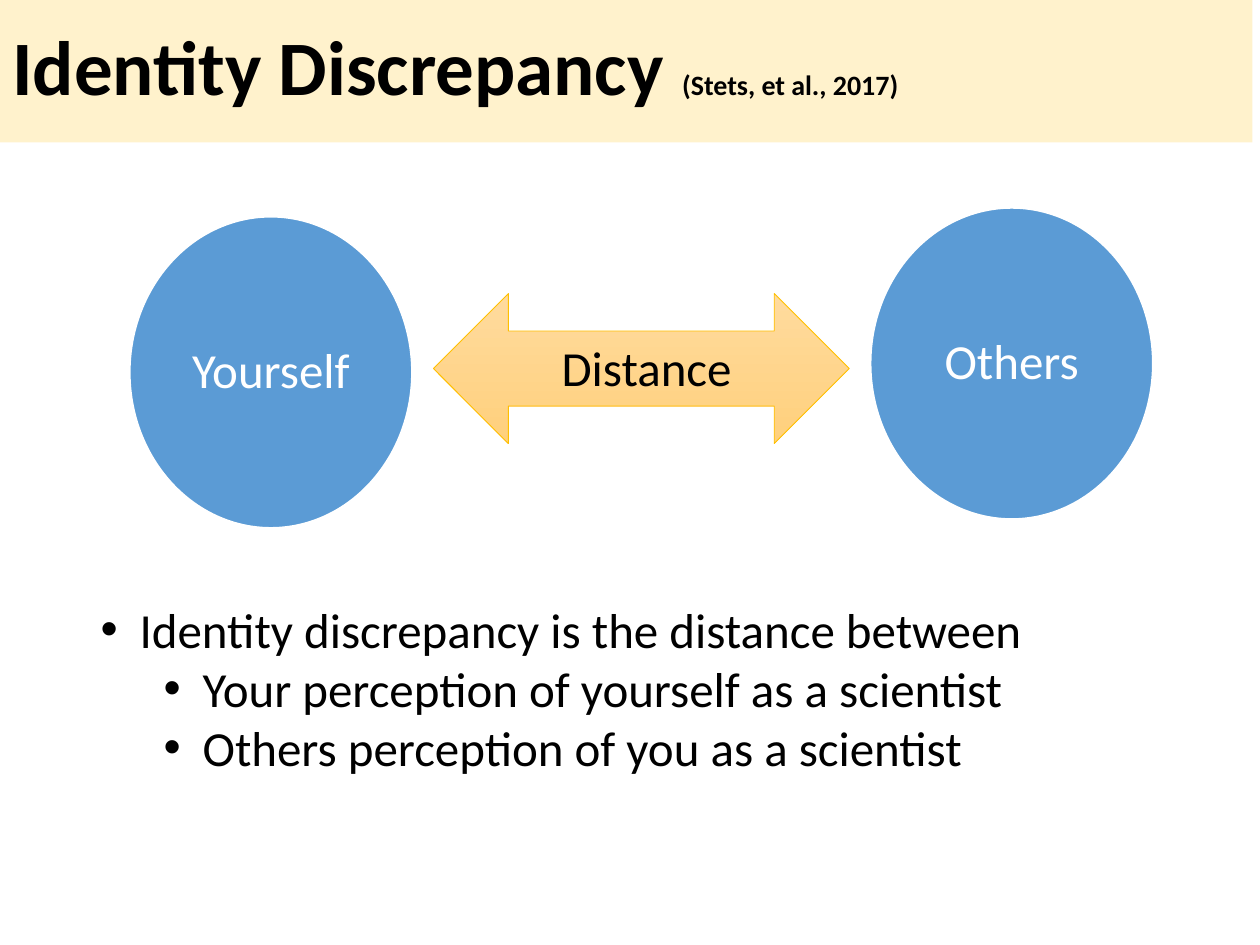
import pptx
import pptx.util
import pptx.dml.color
import pptx.enum.shapes
import pptx.enum.text
import pptx.oxml.ns
from lxml import etree

KIND = pptx.enum.shapes.MSO_SHAPE
ALIGN = pptx.enum.text.PP_ALIGN
ANCHOR = pptx.enum.text.MSO_ANCHOR


def color(hex):
    return pptx.dml.color.RGBColor.from_string(hex)


class Deck:
    """Holds the style and the slide; lengths are cells of a 100 by 75 grid."""
    font, ink, paper = "Calibri", "000000", "FFFFFF"
    size = 28
    cell = pptx.util.Inches(0.1)

    def __init__(self):
        self.file = pptx.Presentation()
        self.file.slide_width = 100 * self.cell
        self.file.slide_height = 75 * self.cell
        self.slide = self.file.slides.add_slide(self.file.slide_layouts[6])

    def place(self, *box):
        return [round(n * self.cell) for n in box]

    def type(self, para, ink=None, size=None, bold=False):
        font = para.font
        font.name, font.bold = self.font, bold
        font.size = pptx.util.Pt(size or self.size)
        font.color.rgb = color(ink or self.ink)

    def shape(self, kind, box, fills, line=None, width=1):
        item = self.slide.shapes.add_shape(kind, *self.place(*box))
        item.shadow.inherit = False
        if len(fills) == 1:
            item.fill.solid()
            item.fill.fore_color.rgb = color(fills[0])
        else:
            item.fill.gradient()
            item.fill.gradient_angle = 270
            for stop, fill in zip(item.fill.gradient_stops, fills):
                stop.color.rgb = color(fill)
        if line:
            item.line.color.rgb = color(line)
            item.line.width = pptx.util.Pt(width)
        else:
            item.line.fill.background()
        return item

    def title(self, box, fill, text, cite):
        frame = self.shape(KIND.RECTANGLE, box, [fill]).text_frame
        frame.word_wrap = True
        frame.vertical_anchor = ANCHOR.MIDDLE
        para = frame.paragraphs[0]
        para.alignment, para.line_spacing = ALIGN.LEFT, 0.9
        self.type(para, size=44, bold=True)
        para.add_run().text = text
        note = para.add_run()
        note.text, note.font.size = cite, pptx.util.Pt(16)

    def disc(self, box, fill, text):
        frame = self.shape(KIND.OVAL, box, [fill], self.paper).text_frame
        frame.word_wrap = True
        frame.vertical_anchor = ANCHOR.MIDDLE
        frame.margin_left = frame.margin_right = 0
        para = frame.paragraphs[0]
        para.text, para.alignment, para.line_spacing = text, ALIGN.CENTER, 0.9
        self.type(para, self.paper)

    def text(self, box, rows):
        """Each row is a level and its words; level None has no bullet."""
        frame = self.slide.shapes.add_textbox(*self.place(*box)).text_frame
        frame.word_wrap = True
        for i, (level, words) in enumerate(rows):
            para = frame.add_paragraph() if i else frame.paragraphs[0]
            para.text = words
            if level is not None:
                self.bullet(para, level)
            self.type(para)

    def bullet(self, para, level):
        para.level = level
        props = para._p.get_or_add_pPr()
        props.set("marL", str(pptx.util.Inches(0.31 + 0.5 * level)))
        props.set("indent", str(-pptx.util.Inches(0.31)))
        for tag, key, val in (("a:buFont", "typeface", "Arial"),
                              ("a:buChar", "char", "•")):
            etree.SubElement(props, pptx.oxml.ns.qn(tag)).set(key, val)


def main():
    deck = Deck()

    # Title band
    deck.title((0, -0.1, 99.4, 11.4), "FFF2CC",
               "Identity Discrepancy ", "(Stets, et al., 2017)")

    # The two views
    for left, top, name in ((10.3, 17.2, "Yourself"), (69.1, 16.5, "Others")):
        deck.disc((left, top, 22.4, 24.7), "5B9BD5", name)

    # Distance between them
    deck.shape(KIND.LEFT_RIGHT_ARROW, (34.4, 23.3, 33, 11.9),
               ["FFDB9E", "FFD07C"], "FFC000", 0.5)
    deck.text((43.6, 26.3, 18.7, 5.7), [(None, "Distance")])

    # Meaning
    deck.text((7, 47.1, 91.5, 15.1), [
        (0, "Identity discrepancy is the distance between"),
        (1, "Your perception of yourself as a scientist"),
        (1, "Others perception of you as a scientist"),
    ])

    deck.file.save("out.pptx")


if __name__ == "__main__":
    main()
